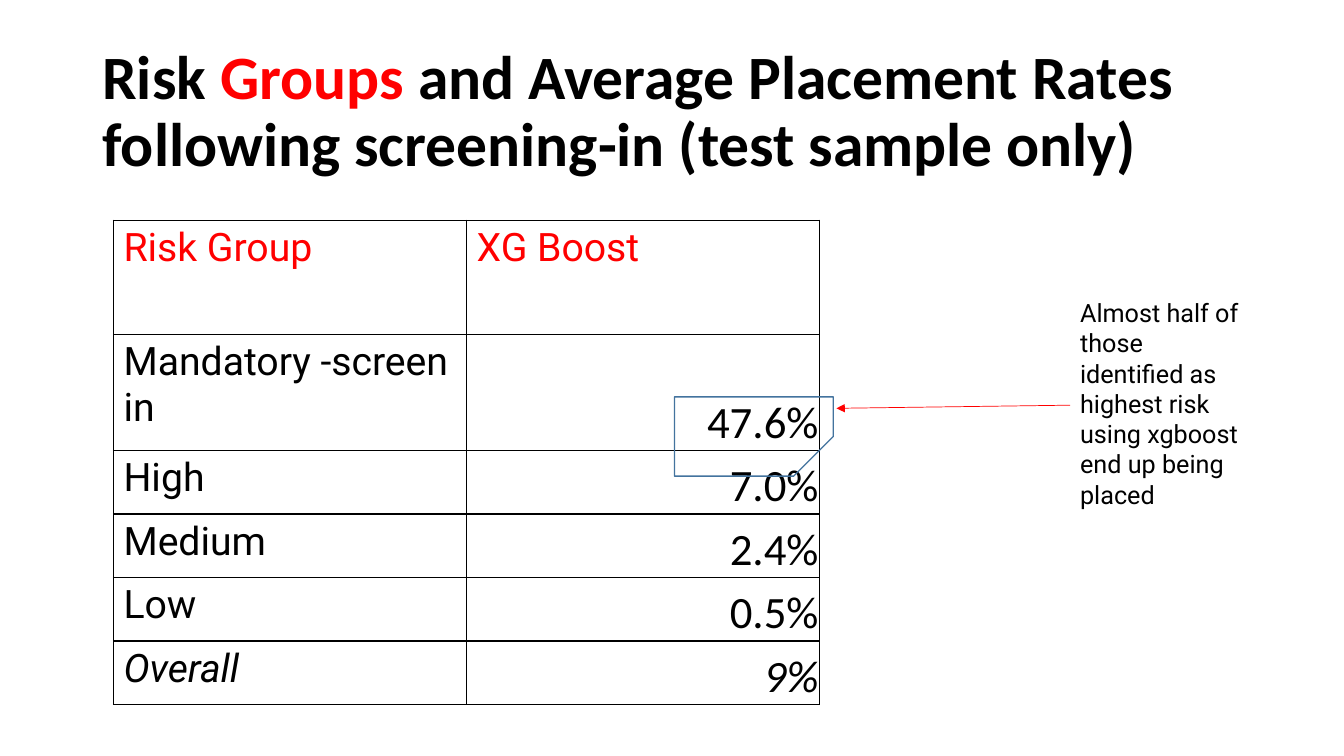
import pptx
import pptx.util
import pptx.dml.color
import pptx.enum.shapes
import pptx.enum.text
import pptx.oxml
import pptx.oxml.ns
from pptx.util import Cm

BLACK = pptx.dml.color.RGBColor(0x00, 0x00, 0x00)
RED = pptx.dml.color.RGBColor(0xFF, 0x00, 0x00)
BLUE = pptx.dml.color.RGBColor(0x43, 0x73, 0x9E)
NS = pptx.oxml.ns.nsdecls("a")


def add_text(paragraph, text, *, size, font="Roboto", color=BLACK, bold=False, italic=False):
    run = paragraph.add_run()
    run.text = text
    run.font.name = font
    run.font.size = pptx.util.Pt(size)
    run.font.color.rgb = color
    run.font.bold = bold
    run.font.italic = italic


def add_borders(cell):
    """Give all four sides of a table cell a 1 pt black line."""
    for position, side in enumerate(("lnL", "lnR", "lnT", "lnB")):
        border = pptx.oxml.parse_xml(
            f'<a:{side} {NS} w="12700"><a:solidFill><a:srgbClr val="{BLACK}"/>'
            f'</a:solidFill><a:prstDash val="solid"/></a:{side}>')
        cell._tc.get_or_add_tcPr().insert(position, border)


deck = pptx.Presentation()
deck.slide_width = Cm(33.87)
deck.slide_height = Cm(19.05)
slide = deck.slides.add_slide(deck.slide_layouts[6])

# Title
title = slide.shapes.add_textbox(Cm(2.33), Cm(1.01), Cm(29.21), Cm(3.68)).text_frame
title.word_wrap = True
title.vertical_anchor = pptx.enum.text.MSO_ANCHOR.MIDDLE
title.paragraphs[0].line_spacing = 0.9
for words, color in (
    ("Risk ", BLACK),
    ("Groups", RED),
    (" and Average Placement Rates following screening-in (test sample only)", BLACK),
):
    add_text(title.paragraphs[0], words, size=44, font="Calibri", color=color, bold=True)

# Placement rates by risk group
rates = [
    ("Risk Group", "XG Boost", 2.87),
    ("Mandatory -screen in", "47.6%", 2.93),
    ("High", "7.0%", 1.6),
    ("Medium", "2.4%", 1.6),
    ("Low", "0.5%", 1.6),
    ("Overall", "9%", 1.6),
]
rate_table = slide.shapes.add_table(
    len(rates), 2, Cm(2.86), Cm(5.55), Cm(17.8), Cm(12.2)).table
rate_table.first_row = False
rate_table.horz_banding = False
for column in rate_table.columns:
    column.width = Cm(8.9)

for row, (group, rate, height) in enumerate(rates):
    rate_table.rows[row].height = Cm(height)
    for column, text in enumerate((group, rate)):
        cell = rate_table.cell(row, column)
        cell.fill.background()
        add_borders(cell)
        paragraph = cell.text_frame.paragraphs[0]
        italic = group == "Overall"
        if row == 0:
            add_text(paragraph, text, size=28, color=RED)
        elif column == 0:
            add_text(paragraph, text, size=28, italic=italic)
        else:
            cell.vertical_anchor = pptx.enum.text.MSO_ANCHOR.BOTTOM
            cell.margin_left = cell.margin_right = cell.margin_top = Cm(0.03)
            cell.margin_bottom = 0
            paragraph.alignment = pptx.enum.text.PP_ALIGN.RIGHT
            add_text(paragraph, text, size=32, font="Calibri", italic=italic)

# Remark on the highest risk group
remark = slide.shapes.add_textbox(Cm(26.97), Cm(7.37), Cm(4.57), Cm(5.64)).text_frame
remark.word_wrap = True
add_text(
    remark.paragraphs[0],
    "Almost half of those identified as highest risk using xgboost end up being placed",
    size=18)

arrow = slide.shapes.add_connector(
    pptx.enum.shapes.MSO_CONNECTOR.STRAIGHT, Cm(26.97), Cm(10.21), Cm(21.08), Cm(10.29))
arrow.line.color.rgb = RED
arrow.line.width = pptx.util.Pt(0.5)
arrow.line._get_or_add_ln().append(
    pptx.oxml.parse_xml(f'<a:tailEnd {NS} type="triangle"/>'))
arrow._element.spPr.append(pptx.oxml.parse_xml(f"<a:effectLst {NS}/>"))

# Hand-drawn ring around the highest rate, in centimetres
ring_points = [
    (21.08, 10.29), (20.96, 10.06), (20.85, 9.96), (20.65, 9.8), (20.42, 9.74),
    (20.17, 9.73), (18.08, 9.75), (17.68, 9.8), (17.32, 9.83), (16.87, 9.91),
    (16.64, 9.93), (16.53, 9.98), (16.51, 10.24), (16.54, 11.07), (16.59, 11.37),
    (16.69, 11.53), (17.02, 11.73), (17.35, 11.86), (18, 11.92), (18.77, 11.94),
    (19.74, 11.81), (20.17, 11.66), (20.68, 11.48), (20.75, 11.35), (20.83, 11.3),
    (20.92, 11.18), (20.96, 11), (20.98, 10.9), (21.08, 10.24), (21.08, 10.08),
]
outline = slide.shapes.build_freeform(*ring_points[0], scale=Cm(1))
outline.add_line_segments(ring_points[1:], close=False)
ring = outline.convert_to_shape()
ring.shadow.inherit = False
ring.fill.background()
ring.line.color.rgb = BLUE
ring.line.width = pptx.util.Pt(1)

deck.save("out.pptx")
